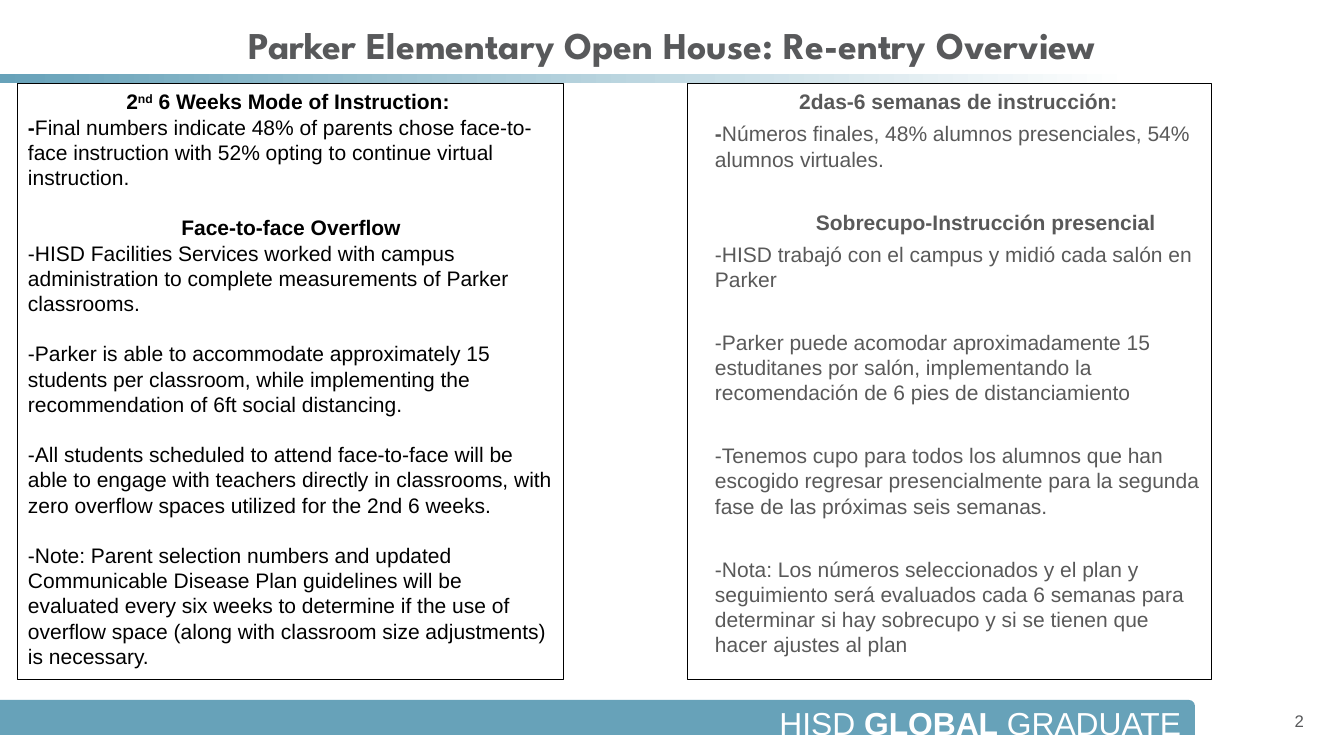
import pptx
import pptx.util
from pptx.dml.color import RGBColor
from pptx.enum.shapes import MSO_SHAPE
from pptx.enum.text import MSO_ANCHOR, PP_ALIGN

EMU_PER_PX = 914400 / 100.8
TEAL = RGBColor(0x67, 0xA2, 0xB9)
WHITE = RGBColor(0xFF, 0xFF, 0xFF)
BLACK = RGBColor(0, 0, 0)
TITLE_GRAY = RGBColor(0x58, 0x59, 0x5B)
BODY_GRAY = RGBColor(0x59, 0x59, 0x59)
CENTER, LEFT, RIGHT = PP_ALIGN.CENTER, PP_ALIGN.LEFT, PP_ALIGN.RIGHT

# Each paragraph: alignment, left indent in px, starts a new section, runs (text, bold)
ENGLISH = [
    (CENTER, 0, False, [("2", True), ("nd", True), (" 6 Weeks Mode of Instruction: ", True)]),
    (LEFT, 0, False, [("-", True), (
        "Final numbers indicate 48% of parents chose face-to-face instruction "
        "with 52% opting to continue virtual instruction.", False)]),
    (CENTER, 0, True, [("Face-to-face Overflow", True)]),
    (LEFT, 0, False, [(
        "-HISD Facilities Services worked with campus administration to complete "
        "measurements of Parker classrooms.", False)]),
    (LEFT, 0, True, [(
        "-Parker is able to accommodate approximately 15 students per classroom, "
        "while implementing the recommendation of 6ft social distancing.", False)]),
    (LEFT, 0, True, [(
        "-All students scheduled to attend face-to-face will be able to engage with "
        "teachers directly in classrooms, with zero overflow spaces utilized for the "
        "2nd 6 weeks.", False)]),
    (LEFT, 0, True, [(
        "-Note: Parent selection numbers and updated Communicable Disease Plan "
        "guidelines will be evaluated every six weeks to determine if the use of "
        "overflow space (along with classroom size adjustments) is necessary.", False)]),
]
SPANISH = [
    (CENTER, 17, False, [("2das-6 semanas de instrucción:", True)]),
    (LEFT, 17, False, [("-", True), (
        "Números finales, 48% alumnos presenciales, 54% alumnos virtuales.", False)]),
    (LEFT, 118, True, [("Sobrecupo-Instrucción presencial", True)]),
    (LEFT, 17, False, [("-HISD trabajó con el campus y midió cada salón en Parker", False)]),
    (LEFT, 17, True, [(
        "-Parker puede acomodar aproximadamente 15 estuditanes por salón, "
        "implementando la recomendación de 6 pies de distanciamiento", False)]),
    (LEFT, 17, True, [(
        "-Tenemos cupo para todos los alumnos que han escogido regresar "
        "presencialmente para la segunda fase de las próximas seis semanas.", False)]),
    (LEFT, 17, True, [(
        "-Nota: Los números seleccionados y el plan y seguimiento será evaluados "
        "cada 6 semanas para determinar si hay sobrecupo y si se tienen que hacer "
        "ajustes al plan", False)]),
]


def px(length):
    return pptx.util.Emu(round(length * EMU_PER_PX))


def set_frame(frame, anchor, inset_x=10, inset_y=5):
    frame.word_wrap = True
    frame.vertical_anchor = anchor
    frame.margin_left = frame.margin_right = px(inset_x)
    frame.margin_top = frame.margin_bottom = px(inset_y)


def add_runs(paragraph, runs, size, color, font="Arial"):
    for text, bold in runs:
        run = paragraph.add_run()
        run.text = text
        run.font.name = font
        run.font.size = pptx.util.Pt(size)
        run.font.bold = bold
        run.font.color.rgb = color


def add_bar(slide, preset, left, top, width, height):
    bar = slide.shapes.add_shape(preset, px(left), px(top), px(width), px(height))
    bar.shadow.inherit = False
    bar.line.fill.background()
    return bar


def add_label(slide, box, runs, size, color, align, anchor, font="Arial", insets=(10, 5)):
    label = slide.shapes.add_textbox(*map(px, box))
    set_frame(label.text_frame, anchor, *insets)
    paragraph = label.text_frame.paragraphs[0]
    paragraph.alignment = align
    add_runs(paragraph, runs, size, color, font)


def add_panel(slide, left, width, content, color, gap, section_gap):
    panel = slide.shapes.add_shape(
        MSO_SHAPE.RECTANGLE, px(left), px(84), px(width), px(596))
    panel.shadow.inherit = False
    panel.fill.background()
    panel.line.color.rgb = BLACK
    panel.line.width = pptx.util.Pt(0.75)
    frame = panel.text_frame
    set_frame(frame, MSO_ANCHOR.TOP)
    for index, (align, indent, new_section, runs) in enumerate(content):
        paragraph = frame.add_paragraph() if index else frame.paragraphs[0]
        paragraph.alignment = align
        if indent:
            paragraph._p.get_or_add_pPr().set("marL", str(px(indent)))
        if index:
            paragraph.space_before = pptx.util.Pt(section_gap if new_section else gap)
        add_runs(paragraph, runs, 15, color)
    return panel


def main():
    deck = pptx.Presentation()
    deck.slide_width, deck.slide_height = px(1344), px(756)
    slide = deck.slides.add_slide(deck.slide_layouts[6])

    # Rule under the title, fading to white
    title_rule = add_bar(slide, MSO_SHAPE.RECTANGLE, 0, 74, 1132, 9)
    title_rule.fill.gradient()
    title_rule.fill.gradient_angle = 0
    for stop, position, color in zip(title_rule.fill.gradient_stops, (0, 1), (TEAL, WHITE)):
        stop.position = position
        stop.color.rgb = color

    # Footer band, slogan and page number
    footer = add_bar(slide, MSO_SHAPE.ROUND_1_RECTANGLE, 0, 700, 1195, 35)
    footer.fill.solid()
    footer.fill.fore_color.rgb = TEAL
    add_label(slide, (505, 697, 689, 39),
              [("HISD ", False), ("GLOBAL", True), (" GRADUATE", False)],
              22.7, WHITE, RIGHT, MSO_ANCHOR.TOP, insets=(13, 7))
    add_label(slide, (1226, 701, 88, 40), [("2", False)],
              12, TITLE_GRAY, RIGHT, MSO_ANCHOR.MIDDLE)

    # Title
    add_label(slide, (67, 16, 1210, 57),
              [("Parker Elementary Open House: Re-entry Overview", True)],
              27, TITLE_GRAY, CENTER, MSO_ANCHOR.MIDDLE, font="League Spartan")

    # English and Spanish panels
    english = add_panel(slide, 18, 546, ENGLISH, BLACK, 0, 18)
    ordinal = english.text_frame.paragraphs[0].runs[1]
    ordinal.font._element.set("baseline", "30000")
    add_panel(slide, 688, 524, SPANISH, BODY_GRAY, 4.8, 27)

    deck.save("out.pptx")


if __name__ == "__main__":
    main()
